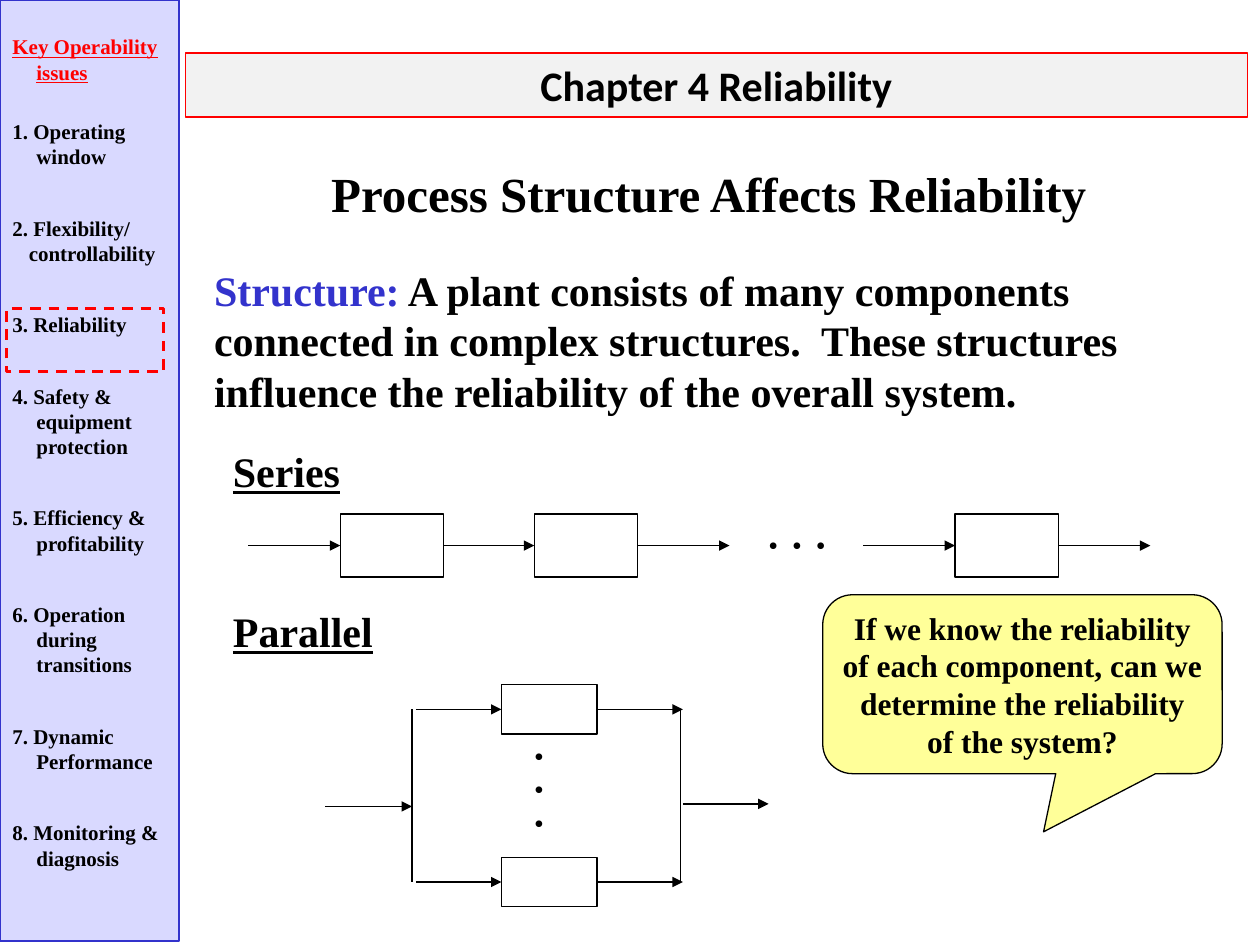
from dataclasses import dataclass

from lxml import etree
from pptx import Presentation
from pptx.dml.color import RGBColor
from pptx.enum.dml import MSO_LINE
from pptx.enum.shapes import MSO_CONNECTOR, MSO_SHAPE
from pptx.enum.text import MSO_ANCHOR, PP_ALIGN
from pptx.oxml.ns import qn
from pptx.util import Inches, Pt

RECTANGLE = MSO_SHAPE.RECTANGLE
CALLOUT = MSO_SHAPE.ROUNDED_RECTANGULAR_CALLOUT
STRAIGHT = MSO_CONNECTOR.STRAIGHT
DASH = MSO_LINE.DASH
LEFT, CENTER = PP_ALIGN.LEFT, PP_ALIGN.CENTER
TOP, MIDDLE = MSO_ANCHOR.TOP, MSO_ANCHOR.MIDDLE
LEFT_SIDE, RIGHT_SIDE = 1, 3

BLACK = RGBColor(0x00, 0x00, 0x00)
RED = RGBColor(0xFF, 0x00, 0x00)
BLUE = RGBColor(0x33, 0x33, 0xCC)
LAVENDER = RGBColor(0xD9, 0xD9, 0xFF)
YELLOW = RGBColor(0xFF, 0xFF, 0x99)
GRAY = RGBColor(0xF2, 0xF2, 0xF2)
SERIF, SANS = "Times New Roman", "Calibri"
DOTS = "•  •  •"


@dataclass(frozen=True)
class Area:
    left: float
    top: float
    width: float
    height: float

    def lengths(self):
        return [Inches(n) for n in (self.left, self.top, self.width, self.height)]


@dataclass(frozen=True)
class Issue:
    text: str
    before: float = 26.4
    margin: float = 0.19
    indent: float = -0.19


ISSUES = [
    Issue("1. Operating window", before=19.6),
    Issue("2. Flexibility/"),
    Issue("controllability", before=0, margin=0.13, indent=0),
    Issue("3. Reliability"),
    Issue("4. Safety & equipment protection"),
    Issue("5. Efficiency & profitability"),
    Issue("6. Operation during transitions"),
    Issue("7. Dynamic Performance"),
    Issue("8. Monitoring & diagnosis"),
]


def add_span(para, text: str, *, size=12, color=BLACK, bold=True,
             underline=False, font=SERIF):
    span = para.add_run()
    span.text = text
    span.font.name = font
    span.font.size = Pt(size)
    span.font.color.rgb = color
    span.font.bold = bold
    span.font.underline = underline


def write(box, text: str, *, align=LEFT, anchor=TOP, wrap=True, **style):
    frame = box.text_frame
    frame.word_wrap = wrap
    frame.vertical_anchor = anchor
    for number, line in enumerate(text.split("\n")):
        para = frame.add_paragraph() if number else frame.paragraphs[0]
        para.alignment = align
        add_span(para, line, **style)


def add_text(page, area: Area, text: str, **style):
    box = page.shapes.add_textbox(*area.lengths())
    write(box, text, **style)
    return box


def add_box(page, area: Area, *, fill=None, line=BLACK, weight=0.75, kind=RECTANGLE):
    box = page.shapes.add_shape(kind, *area.lengths())
    box.shadow.inherit = False
    if fill is None:
        box.fill.background()
    else:
        box.fill.solid()
        box.fill.fore_color.rgb = fill
    box.line.color.rgb = line
    box.line.width = Pt(weight)
    return box


def add_line(page, start: tuple[float, float], end: tuple[float, float], *,
             source=None, target=None, arrow=True):
    ends = [Inches(n) for n in (*start, *end)]
    connector = page.shapes.add_connector(STRAIGHT, *ends)
    if source is not None:
        connector.begin_connect(source, RIGHT_SIDE)
    if target is not None:
        connector.end_connect(target, LEFT_SIDE)
    connector.line.color.rgb = BLACK
    connector.line.width = Pt(0.75)
    properties = connector._element.spPr
    if arrow:
        outline = properties.find(qn("a:ln"))
        etree.SubElement(outline, qn("a:tailEnd"), type="triangle")
    etree.SubElement(properties, qn("a:effectLst"))


def draw_series(page):
    middle, width, height, reach = 4.33, 0.82, 0.5, 0.73
    lefts = (2.7, 4.24, 7.58)
    first, second, last = [
        add_box(page, Area(left, middle - height / 2, width, height)) for left in lefts
    ]
    for left, source, target in (
        (lefts[0] - reach, None, first),
        (lefts[0] + width, first, second),
        (lefts[1] + width, second, None),
        (lefts[2] - reach, None, last),
        (lefts[2] + width, last, None),
    ):
        add_line(page, (left, middle), (left + reach, middle),
                 source=source, target=target)
    add_text(page, Area(6, 4.14, 1.08, 0.37), DOTS, size=16, bold=False)


def draw_parallel(page):
    upper, lower = 5.63, 7
    left, width, height, reach = 3.98, 0.76, 0.39, 0.68
    right = left + width
    for middle in (upper, lower):
        box = add_box(page, Area(left, middle - height / 2, width, height))
        add_line(page, (left - reach, middle), (left, middle), target=box)
        add_line(page, (right, middle), (right + reach, middle), source=box)
    for rail in (3.27, 5.4):
        add_line(page, (rail, upper), (rail, lower), arrow=False)
    add_line(page, (2.58, 6.4), (3.27, 6.4))
    add_line(page, (5.42, 6.38), (6.1, 6.38))
    add_text(page, Area(4.14, 5.81, 0.39, 0.9), DOTS, size=16, bold=False)


def draw_sidebar(page):
    sidebar = add_box(page, Area(0, 0, 1.42, 7.47), fill=LAVENDER, line=BLUE)
    frame = sidebar.text_frame
    frame.margin_top = Inches(0.27)
    write(sidebar, "Key Operability issues", color=RED, underline=True)
    for issue in ISSUES:
        para = frame.add_paragraph()
        para.alignment = LEFT
        para.space_before = Pt(issue.before)
        add_span(para, issue.text)
    for para, issue in zip(frame.paragraphs, [Issue(""), *ISSUES]):
        properties = para._p.get_or_add_pPr()
        properties.set("marL", str(Inches(issue.margin)))
        properties.set("indent", str(Inches(issue.indent)))
    marker = add_box(page, Area(0.05, 2.45, 1.25, 0.5), line=RED, weight=1.5)
    marker.line.dash_style = DASH


def draw_question(page):
    callout = add_box(page, Area(6.53, 4.72, 3.17, 1.42), fill=YELLOW, kind=CALLOUT)
    for number, value in enumerate((0.053, 0.825, 0.167)):
        callout.adjustments[number] = value
    question = ("If we know the reliability\nof each component, can we\n"
                "determine the reliability\nof the system?")
    write(callout, question, size=18, align=CENTER, anchor=MIDDLE, wrap=False)


def main():
    deck = Presentation()
    deck.slide_width, deck.slide_height = Inches(10), Inches(7.5)
    page = deck.slides.add_slide(deck.slide_layouts[6])
    add_text(page, Area(1.75, 1.25, 7.75, 0.57),
             "Process Structure Affects Reliability", size=28, align=CENTER)
    summary = add_text(page, Area(1.6, 2.05, 7.58, 1.3), "Structure:",
                       size=24, color=BLUE)
    add_span(summary.text_frame.paragraphs[0],
             " A plant consists of many components connected in complex structures.  "
             "These structures influence the reliability of the overall system.", size=24)
    draw_parallel(page)
    draw_series(page)
    for top, heading in ((3.49, "Series"), (4.76, "Parallel")):
        add_text(page, Area(1.75, top, 2.75, 0.5), heading, size=24, underline=True)
    draw_question(page)
    draw_sidebar(page)
    banner = add_box(page, Area(1.47, 0.42, 8.43, 0.51), fill=GRAY, line=RED)
    write(banner, "Chapter 4 Reliability", size=24, font=SANS, align=CENTER)
    deck.save("out.pptx")


if __name__ == "__main__":
    main()
